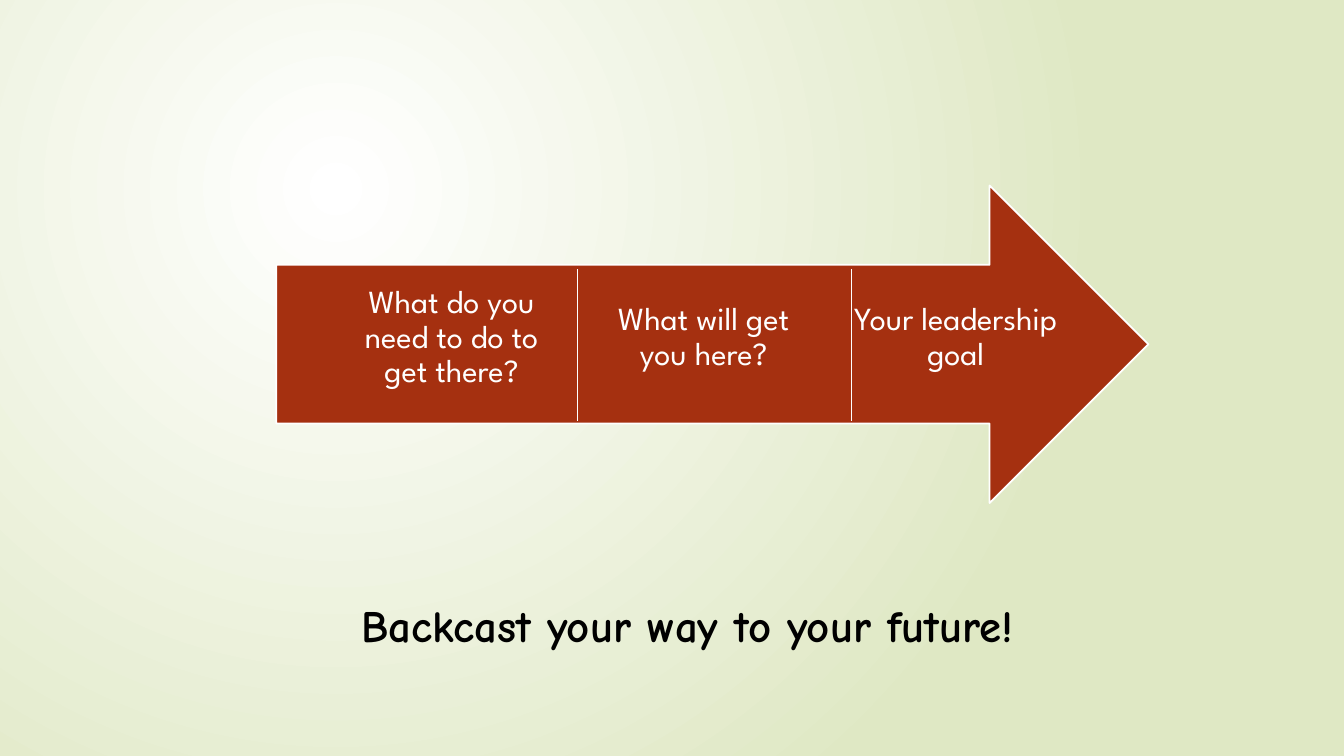
"""Build the backcasting slide: a three-step arrow above a closing line."""
import dataclasses
import typing

import lxml.etree
import pptx
import pptx.dml.color
import pptx.enum.shapes
import pptx.enum.text
import pptx.oxml.ns
import pptx.util

WIDTH, HEIGHT = pptx.util.Inches(13.33), pptx.util.Inches(7.5)
COLUMNS, ROWS = 1333, 750


@dataclasses.dataclass(frozen=True)
class Theme:
    arrow: str = "A53010"
    light: str = "FFFFFF"
    meadow: str = "DFE8C4"
    ink: str = "000000"
    step_font: str = "League Spartan"
    step_size: float = 23
    closing_font: str = "Comic Neue"
    closing_size: float = 32
    outline: float = 1.25
    divider: float = 0.75


@dataclasses.dataclass(frozen=True)
class Box:
    col: float
    row: float
    cols: float
    rows: float

    def emu(self) -> tuple[int, int, int, int]:
        return x(self.col), y(self.row), x(self.cols), y(self.rows)


THEME = Theme()
ARROW = Box(274, 184, 865, 315)
FIRST_STEP = Box(344, 256, 208, 158)
STEP_PITCH = 250
STEPS = (
    "What do you need to do to get there?",
    "What will get you here?",
    "Your leadership goal",
)
DIVIDERS = (573, 845)
DIVIDER_TOP, DIVIDER_BOTTOM = 267, 418
CLOSING = Box(123, 588, 1118, 64)


def x(col: float) -> int:
    return round(WIDTH * col / COLUMNS)


def y(row: float) -> int:
    return round(HEIGHT * row / ROWS)


def rgb(value: str) -> pptx.dml.color.RGBColor:
    return pptx.dml.color.RGBColor.from_string(value)


def apply(target: typing.Any, formats: dict[str, typing.Any]) -> None:
    for name, value in formats.items():
        setattr(target, name, value)


def paint_background(s: typing.Any) -> None:
    fill = s.background.fill
    fill.gradient()
    for stop, color in zip(fill.gradient_stops, (THEME.light, THEME.meadow)):
        stop.color.rgb = rgb(color)
    qn = pptx.oxml.ns.qn
    grad = s.element.find(".//" + qn("a:gradFill"))
    grad.remove(grad.find(qn("a:lin")))
    circle = lxml.etree.SubElement(grad, qn("a:path"))
    circle.set("path", "circle")
    focus = lxml.etree.SubElement(circle, qn("a:fillToRect"))
    for side, share in {"l": 50, "t": 50, "r": 100, "b": 100}.items():
        focus.set(side, str(share * 1000))


def add_arrow(s: typing.Any, box: Box) -> None:
    sp = s.shapes.add_shape(pptx.enum.shapes.MSO_SHAPE.RIGHT_ARROW, *box.emu())
    sp.shadow.inherit = False
    sp.fill.solid()
    sp.fill.fore_color.rgb = rgb(THEME.arrow)
    sp.line.color.rgb = rgb(THEME.light)
    sp.line.width = pptx.util.Pt(THEME.outline)


def add_text(
    s: typing.Any,
    box: Box,
    text: str,
    color: str,
    frame: dict[str, typing.Any],
    paragraph: dict[str, typing.Any],
    font: dict[str, typing.Any],
) -> None:
    tf = s.shapes.add_textbox(*box.emu()).text_frame
    apply(tf, {"word_wrap": True, **frame})
    p = tf.paragraphs[0]
    apply(p, {"alignment": pptx.enum.text.PP_ALIGN.CENTER, **paragraph})
    r = p.add_run()
    r.text = text
    apply(r.font, font)
    r.font.color.rgb = rgb(color)


def add_divider(s: typing.Any, col: float) -> None:
    line = s.shapes.add_connector(
        pptx.enum.shapes.MSO_CONNECTOR.STRAIGHT,
        x(col), y(DIVIDER_TOP), x(col), y(DIVIDER_BOTTOM),
    )
    line.line.color.rgb = rgb(THEME.light)
    line.line.width = pptx.util.Pt(THEME.divider)
    lxml.etree.SubElement(line.element.spPr, pptx.oxml.ns.qn("a:effectLst"))


def main() -> None:
    prs = pptx.Presentation()
    apply(prs, {"slide_width": WIDTH, "slide_height": HEIGHT})
    s = prs.slides.add_slide(prs.slide_layouts[6])
    paint_background(s)
    add_arrow(s, ARROW)
    step_frame = {
        "vertical_anchor": pptx.enum.text.MSO_ANCHOR.MIDDLE,
        "margin_left": 0,
        "margin_right": 0,
        "margin_top": y(26),
        "margin_bottom": y(26),
    }
    step_font = {
        "name": THEME.step_font,
        "size": pptx.util.Pt(THEME.step_size),
    }
    for i, text in enumerate(STEPS):
        box = dataclasses.replace(FIRST_STEP, col=FIRST_STEP.col + i * STEP_PITCH)
        add_text(s, box, text, THEME.light, step_frame, {"line_spacing": 0.9}, step_font)
    for col in DIVIDERS:
        add_divider(s, col)
    closing_font = {
        "name": THEME.closing_font,
        "size": pptx.util.Pt(THEME.closing_size),
        "bold": True,
    }
    closing_frame = {"auto_size": pptx.enum.text.MSO_AUTO_SIZE.SHAPE_TO_FIT_TEXT}
    add_text(
        s, CLOSING, "Backcast your way to your future!",
        THEME.ink, closing_frame, {}, closing_font,
    )
    prs.save("out.pptx")


if __name__ == "__main__":
    main()
